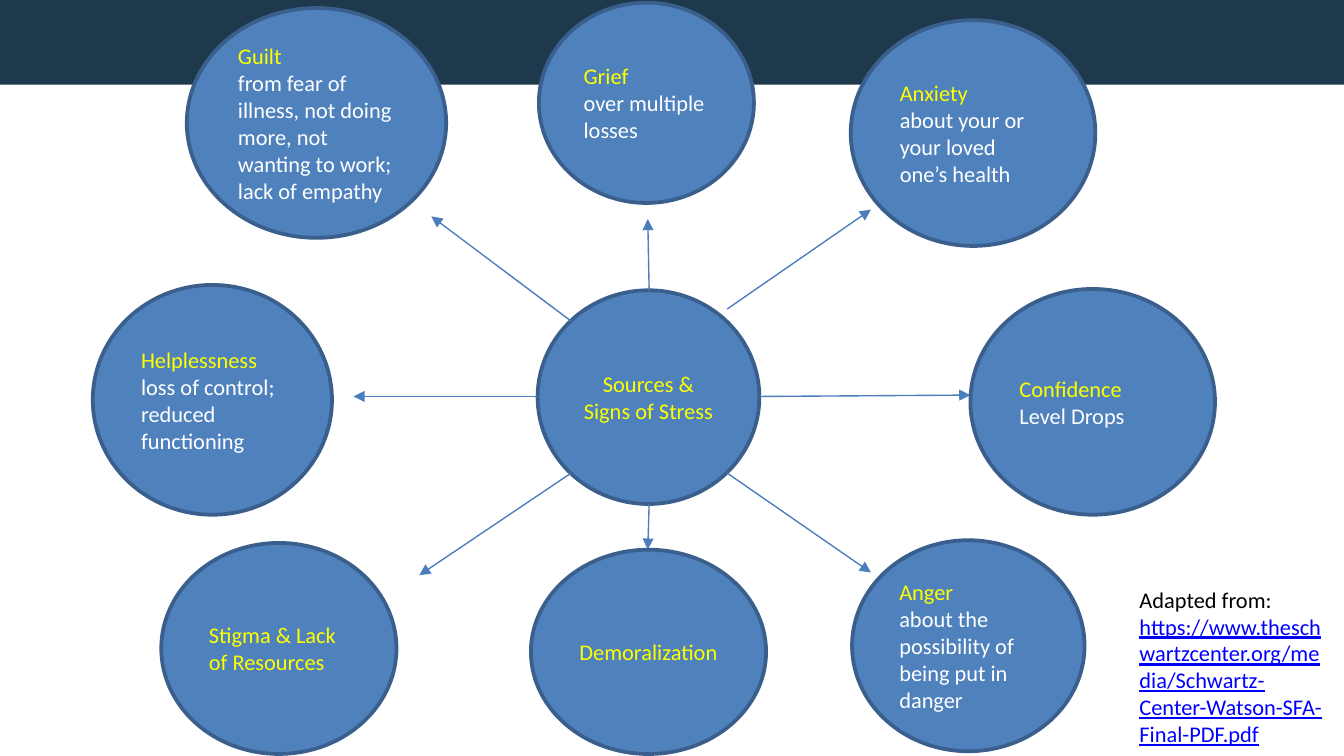
import pptx
import pptx.dml.color
import pptx.enum.shapes
import pptx.enum.text
import pptx.oxml
import pptx.oxml.ns
import pptx.util
from pptx.util import Inches

YELLOW, WHITE = "FFFF00", "FFFFFF"
BLUE, EDGE, ARROW = "4F81BD", "3A5F8C", "4B7EBC"
SHAPE = pptx.enum.shapes.MSO_SHAPE
ALIGN = pptx.enum.text.PP_ALIGN

# left, top, width, height, heading, detail, detail on the heading's line
CAUSES = [
    (6.33, 0.15, 1.82, 1.68, "Anxiety", "about your or your loved one’s health", False),
    (7.22, 2.15, 1.82, 1.68, "Confidence", " Level Drops", True),
    (1.39, 0.06, 1.93, 1.71, "Guilt", "from fear of illness, not doing more, "
     "not wanting to work; lack of empathy", False),
    (0.69, 2.12, 1.78, 1.71, "Helplessness", "loss of control; reduced functioning", False),
    (1.2, 4.04, 1.75, 1.57, "Stigma & Lack of Resources", "", False),
    (6.34, 4.02, 1.73, 1.57, "Anger", "about the possibility of being put in danger", False),
    (4.01, 0.02, 1.6, 1.49, "Grief", "over multiple losses", False),
]
# start x, start y, end x, end y
ARROWS = [
    (5.41, 2.3, 6.48, 1.56), (5.41, 3.52, 6.48, 4.26),
    (5.65, 2.95, 7.22, 2.94), (4.25, 2.39, 3.21, 1.61),
    (4, 2.95, 2.63, 2.95), (4.25, 3.52, 3.12, 4.28),
    (4.83, 3.75, 4.82, 4.09), (4.83, 2.16, 4.82, 1.63),
]


def color(text):
    return pptx.dml.color.RGBColor.from_string(text)


def add_plain(slide, kind, box, fill):
    """Add a filled shape with no shadow and no outline."""
    shape = slide.shapes.add_shape(kind, *map(Inches, box))
    shape.shadow.inherit = False
    shape.fill.solid()
    shape.fill.fore_color.rgb = color(fill)
    shape.line.fill.background()
    return shape


def write(frame, lines, align=ALIGN.LEFT):
    """Fill a frame; each line is a list of (text, colour) runs."""
    frame.word_wrap = True
    for num, runs in enumerate(lines):
        para = frame.add_paragraph() if num else frame.paragraphs[0]
        para.alignment = align
        para.font.name = "Calibri"
        para.font.size = pptx.util.Pt(12)
        for text, tint in runs:
            run = para.add_run()
            run.text = text
            run.font.color.rgb = color(tint)


def add_circle(slide, box, lines, align=ALIGN.LEFT):
    circle = add_plain(slide, SHAPE.OVAL, box, BLUE)
    circle.line.color.rgb = color(EDGE)
    circle.line.width = pptx.util.Pt(2)
    circle.text_frame.vertical_anchor = pptx.enum.text.MSO_ANCHOR.MIDDLE
    write(circle.text_frame, lines, align)


def add_cause(slide, box, head, detail, inline):
    lines = [[(head, YELLOW)]]
    if inline:
        lines[0].append((detail, WHITE))
    elif detail:
        lines.append([(detail, WHITE)])
    add_circle(slide, box, lines)


def add_arrow(slide, ends):
    kind = pptx.enum.shapes.MSO_CONNECTOR.STRAIGHT
    arrow = slide.shapes.add_connector(kind, *map(Inches, ends))
    arrow.line.color.rgb = color(ARROW)
    arrow.line.width = pptx.util.Pt(0.75)
    make, name = pptx.oxml.parse_xml, pptx.oxml.ns.nsdecls("a")
    arrow.line._get_or_add_ln().append(make(f'<a:tailEnd {name} type="triangle"/>'))
    arrow._element.spPr.append(make(f"<a:effectLst {name}/>"))


def add_credit(slide):
    box = slide.shapes.add_textbox(*map(Inches, (8.38, 4.31, 1.62, 1.31)))
    link = ("https://www.theschwartzcenter.org/media/"
            "Schwartz-Center-Watson-SFA-Final-PDF.pdf")
    write(box.text_frame, [[("Adapted from: ", "000000"), (link, "0000FF")]])
    box.text_frame.paragraphs[0].runs[1].font.underline = True
    box.text_frame.auto_size = pptx.enum.text.MSO_AUTO_SIZE.SHAPE_TO_FIT_TEXT


def main():
    deck = pptx.Presentation()
    deck.slide_width = Inches(10)
    deck.slide_height = Inches(10 * 9 / 16)
    slide = deck.slides.add_slide(deck.slide_layouts[6])
    add_plain(slide, SHAPE.RECTANGLE, (0, 0, 10, 0.63), "1E384C")
    add_circle(slide, (4, 2.16, 1.65, 1.59),
               [[("Sources & Signs of Stress", YELLOW)]], ALIGN.CENTER)
    for ends in ARROWS:
        add_arrow(slide, ends)
    for *box, head, detail, inline in CAUSES:
        add_cause(slide, box, head, detail, inline)
    add_circle(slide, (3.95, 4.09, 1.75, 1.52),
               [[("Demoralization", YELLOW)]], ALIGN.CENTER)
    add_credit(slide)
    deck.save("out.pptx")


if __name__ == "__main__":
    main()
